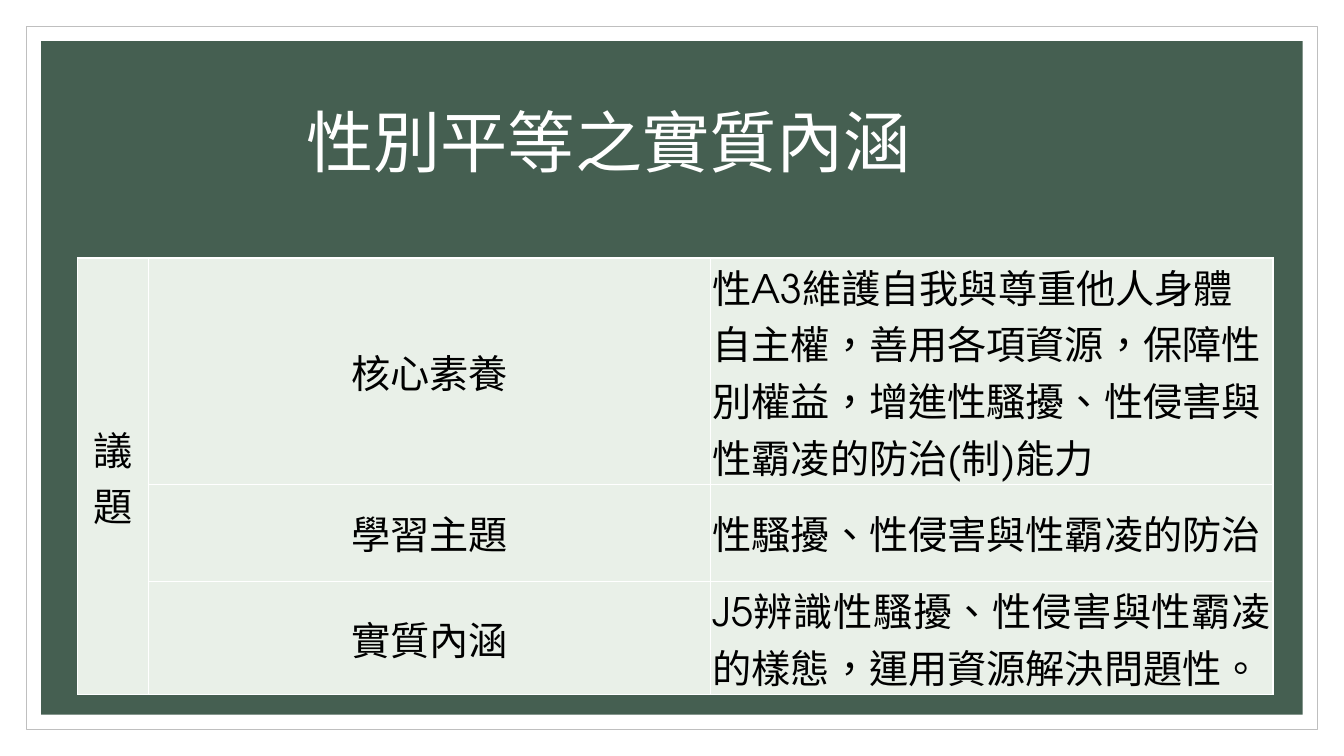
from dataclasses import dataclass
from lxml.etree import SubElement
from pptx import Presentation
from pptx.dml.color import RGBColor
from pptx.enum.lang import MSO_LANGUAGE_ID
from pptx.enum.shapes import MSO_SHAPE
from pptx.enum.text import MSO_ANCHOR, MSO_AUTO_SIZE, PP_ALIGN
from pptx.oxml.ns import qn
from pptx.util import Cm, Pt

WHITE = RGBColor(0xFF, 0xFF, 0xFF)
BLACK = RGBColor(0, 0, 0)
GRAY = RGBColor(0xBF, 0xBF, 0xBF)
GREEN = RGBColor(0x45, 0x5F, 0x51)
PALE = RGBColor(0xE9, 0xF0, 0xE8)
FONT = "TeX Gyre Adventor"
WIDTH, HEIGHT = 33.87, 19.05
COLS = (1.78, 14.17, 14.17)


@dataclass
class Frame:
    inset: float
    fill: RGBColor
    line: RGBColor | None = None


@dataclass
class Topic:
    name: str
    text: str
    height: float
    align: PP_ALIGN = PP_ALIGN.LEFT


FRAMES = (Frame(0.66, WHITE, GRAY), Frame(1.04, GREEN))
TOPICS = (
    Topic("核心素養", "性A3維護自我與尊重他人身體自主權，善用各項資源，保障性別權益，"
          "增進性騷擾、性侵害與性霸凌的防治(制)能力", 5.23),
    Topic("學習主題", "性騷擾、性侵害與性霸凌的防治", 2.44),
    Topic("實質內涵", "J5辨識性騷擾、性侵害與性霸凌的樣態，運用資源解決問題性。",
          2.62, PP_ALIGN.JUSTIFY),
)


def write(frame, text: str, size: int, color: RGBColor, align: PP_ALIGN) -> None:
    frame.text = text
    for par in frame.paragraphs:
        par.alignment = align
        for run in par.runs:
            font = run.font
            font.name, font.size = FONT, Pt(size)
            font.color.rgb = color
            font.language_id = MSO_LANGUAGE_ID.TRADITIONAL_CHINESE


def draw_frame(slide, frame: Frame) -> None:
    gap = frame.inset
    box = slide.shapes.add_shape(MSO_SHAPE.RECTANGLE, Cm(gap), Cm(gap),
                                 Cm(WIDTH - 2 * gap), Cm(HEIGHT - 2 * gap))
    box.shadow.inherit = False
    box.fill.solid()
    box.fill.fore_color.rgb = frame.fill
    if frame.line is None:
        box.line.fill.background()
    else:
        box.line.color.rgb = frame.line
        box.line.width = Pt(0.5)


def draw_title(slide, text: str) -> None:
    title = slide.shapes.title
    slide.shapes.element.append(title.element)
    title.left, title.top, title.width, title.height = Cm(2.97), Cm(1.78), Cm(27.94), Cm(3.81)
    frame = title.text_frame
    write(frame, text, 48, WHITE, PP_ALIGN.LEFT)
    frame.auto_size = MSO_AUTO_SIZE.NONE
    frame.word_wrap = True
    frame.vertical_anchor = MSO_ANCHOR.MIDDLE
    frame.margin_left = Cm(4.75)
    frame.paragraphs[0].line_spacing = 0.9


def style_cell(cell) -> None:
    cell.margin_left = cell.margin_right = Cm(0.05)
    cell.margin_top = cell.margin_bottom = 0
    cell.vertical_anchor = MSO_ANCHOR.MIDDLE
    props = cell._tc.get_or_add_tcPr()
    for side in ("lnL", "lnR", "lnT", "lnB"):
        line = SubElement(props, qn(f"a:{side}"), w=str(Pt(1)))
        fill = SubElement(line, qn("a:solidFill"))
        SubElement(fill, qn("a:srgbClr"), val=str(WHITE))
    cell.fill.solid()
    cell.fill.fore_color.rgb = PALE


def draw_table(slide, head: str, topics: tuple[Topic, ...]) -> None:
    total = sum(topic.height for topic in topics)
    table = slide.shapes.add_table(len(topics), len(COLS), Cm(1.96), Cm(6.5),
                                   Cm(sum(COLS)), Cm(total)).table
    table.first_row = table.horz_banding = False
    for col, width in zip(table.columns, COLS):
        col.width = Cm(width)
    for cell in table.iter_cells():
        style_cell(cell)
    table.cell(0, 0).merge(table.cell(len(topics) - 1, 0))
    write(table.cell(0, 0).text_frame, head, 28, BLACK, PP_ALIGN.CENTER)
    for row, topic in enumerate(topics):
        table.rows[row].height = Cm(topic.height)
        write(table.cell(row, 1).text_frame, topic.name, 28, BLACK, PP_ALIGN.CENTER)
        write(table.cell(row, 2).text_frame, topic.text, 28, BLACK, topic.align)


def main() -> None:
    deck = Presentation()
    deck.slide_width, deck.slide_height = Cm(WIDTH), Cm(HEIGHT)
    slide = deck.slides.add_slide(deck.slide_layouts[5])
    for frame in FRAMES:
        draw_frame(slide, frame)
    draw_title(slide, "性別平等之實質內涵")
    draw_table(slide, "議題", TOPICS)
    deck.save("out.pptx")


if __name__ == "__main__":
    main()
